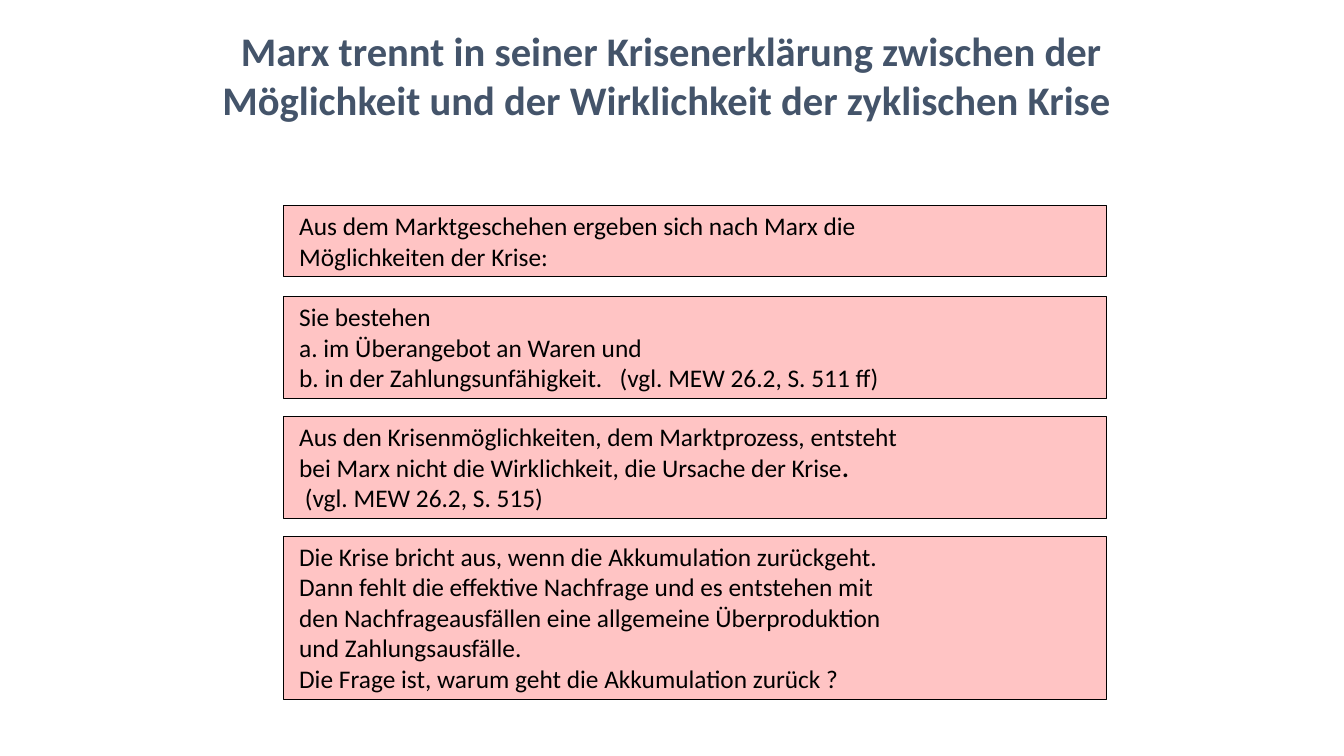
from lxml import etree
from pptx import Presentation
from pptx.dml.color import RGBColor
from pptx.enum.shapes import MSO_SHAPE
from pptx.enum.text import MSO_ANCHOR, MSO_AUTO_SIZE, PP_ALIGN
from pptx.oxml.ns import qn
from pptx.util import Cm, Pt

RECTANGLE = MSO_SHAPE.RECTANGLE
TOP = MSO_ANCHOR.TOP
NO_AUTOFIT = MSO_AUTO_SIZE.NONE
LEFT, CENTER = PP_ALIGN.LEFT, PP_ALIGN.CENTER

SLATE = RGBColor(0x44, 0x54, 0x6A)
RED = RGBColor(0xFF, 0x00, 0x00)
BLACK = RGBColor(0x00, 0x00, 0x00)
FONT = "Calibri"
FILL_OPACITY = "23000"
LINE_HEIGHT = 0.775
VERTICAL_MARGINS = 0.25

TITLE = (
    "Marx trennt in seiner Krisenerklärung zwischen der "
    "Möglichkeit und der Wirklichkeit der zyklischen Krise "
)

BOXES = [
    (5.18, [
        (["Aus dem Marktgeschehen ergeben sich nach Marx die",
          "Möglichkeiten der Krise:"], ""),
    ]),
    (7.47, [
        (["Sie bestehen",
          "a. im Überangebot an Waren und",
          "b. in der Zahlungsunfähigkeit.   (vgl. MEW 26.2, S. 511 ff)"], ""),
    ]),
    (10.49, [
        (["Aus den Krisenmöglichkeiten, dem Marktprozess, entsteht",
          "bei Marx nicht die Wirklichkeit, die Ursache der Krise"], "."),
        ([" (vgl. MEW 26.2, S. 515)"], ""),
    ]),
    (13.51, [
        (["Die Krise bricht aus, wenn die Akkumulation zurückgeht.",
          "Dann fehlt die effektive Nachfrage und es entstehen mit",
          "den Nachfrageausfällen eine allgemeine Überproduktion",
          "und Zahlungsausfälle.",
          "Die Frage ist, warum geht die Akkumulation zurück ?"], ""),
    ]),
]


def format_runs(paragraph, size, color):
    for run in paragraph.runs:
        run.font.name = FONT
        run.font.size = Pt(size)
        run.font.color.rgb = color


presentation = Presentation()
presentation.slide_width = Cm(33.87)
presentation.slide_height = Cm(19.05)
slide = presentation.slides.add_slide(presentation.slide_layouts[5])

title = slide.shapes.title
title.left, title.top, title.width, title.height = Cm(4.23), Cm(0.53), Cm(25.4), Cm(2.75)
title_frame = title.text_frame
title_frame.text = TITLE
title_frame.auto_size = NO_AUTOFIT
title_frame.vertical_anchor = TOP
title_paragraph = title_frame.paragraphs[0]
title_paragraph.alignment = CENTER
format_runs(title_paragraph, 29, SLATE)
title_paragraph.runs[0].font.bold = True

for top, paragraphs in BOXES:
    line_count = sum(len(lines) for lines, bold_ending in paragraphs)
    height = line_count * LINE_HEIGHT + VERTICAL_MARGINS
    shape = slide.shapes.add_shape(RECTANGLE, Cm(7.14), Cm(top), Cm(20.75), Cm(height))
    shape.shadow.inherit = False
    shape.fill.solid()
    shape.fill.fore_color.rgb = RED
    color_element = shape.fill._xPr.find(qn("a:solidFill"))[0]
    etree.SubElement(color_element, qn("a:alpha")).set("val", FILL_OPACITY)
    shape.line.color.rgb = BLACK
    shape.line.width = Pt(0.75)

    frame = shape.text_frame
    frame.word_wrap = True
    frame.vertical_anchor = TOP
    frame.margin_left = Cm(0.4)
    for index, (lines, bold_ending) in enumerate(paragraphs):
        paragraph = frame.add_paragraph() if index else frame.paragraphs[0]
        paragraph.text = "\v".join(lines)
        paragraph.alignment = LEFT
        if bold_ending:
            ending = paragraph.add_run()
            ending.text = bold_ending
            ending.font.bold = True
        format_runs(paragraph, 18.1, BLACK)

presentation.save("out.pptx")
